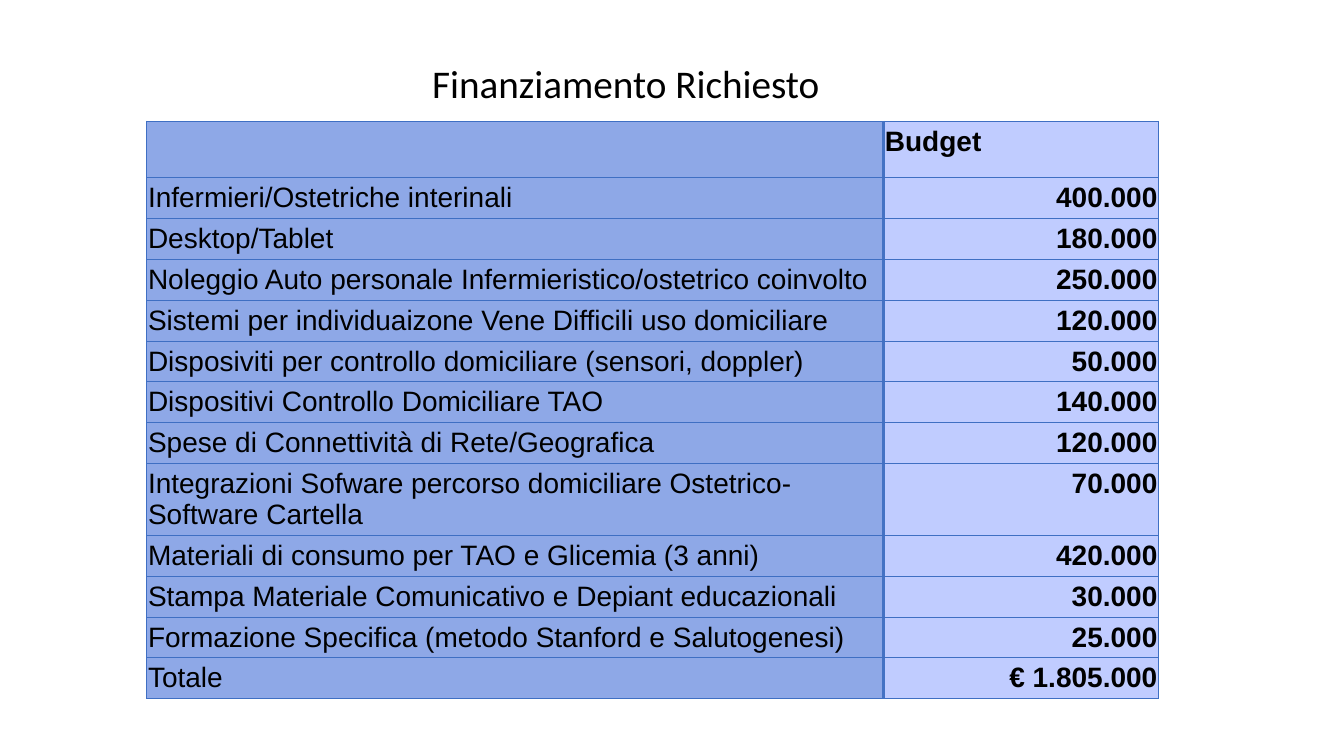
"""Build the slide with the requested funding table."""
import pptx
import pptx.dml.color
import pptx.enum.text
import pptx.oxml
import pptx.oxml.ns
import pptx.util

Cm, Pt = pptx.util.Cm, pptx.util.Pt
RGB = pptx.dml.color.RGBColor.from_string
ALIGN = pptx.enum.text.PP_ALIGN
ANCHOR = pptx.enum.text.MSO_ANCHOR

THEME = {
    "text": "000000", "label_fill": "8EA8E7", "value_fill": "C0CCFF",
    "border": "3F6FC3", "divider": "4472C4",
    "title_font": "Calibri", "table_font": "Arial",
    "title_size": 28, "table_size": 20,
}
BUDGET = [
    ("", "Budget"),
    ("Infermieri/Ostetriche interinali", "400.000"),
    ("Desktop/Tablet", "180.000"),
    ("Noleggio Auto personale Infermieristico/ostetrico coinvolto", "250.000"),
    ("Sistemi per individuaizone Vene Difficili uso domiciliare", "120.000"),
    ("Disposiviti per controllo domiciliare (sensori, doppler)", "50.000"),
    ("Dispositivi Controllo Domiciliare TAO", "140.000"),
    ("Spese di Connettività di Rete/Geografica", "120.000"),
    ("Integrazioni Sofware percorso domiciliare Ostetrico- Software Cartella", "70.000"),
    ("Materiali di consumo per TAO e Glicemia (3 anni)", "420.000"),
    ("Stampa Materiale Comunicativo e Depiant educazionali", "30.000"),
    ("Formazione Specifica (metodo Stanford e Salutogenesi)", "25.000"),
    ("Totale", "€ 1.805.000"),
]


def write(tf, text, *, font, size, bold=False, align=ALIGN.LEFT):
    p = tf.paragraphs[0]
    p.alignment = align
    p.font.size = Pt(size)
    if text:
        r = p.add_run()
        r.text = text
        r.font.name, r.font.size, r.font.bold = font, Pt(size), bold
        r.font.color.rgb = RGB(THEME["text"])


def set_border(cell, side, color, width):
    cell._tc.get_or_add_tcPr().append(pptx.oxml.parse_xml(
        f'<a:{side} {pptx.oxml.ns.nsdecls("a")} w="{Pt(width)}"><a:solidFill>'
        f'<a:srgbClr val="{color}"/></a:solidFill></a:{side}>'))


prs = pptx.Presentation()
prs.slide_width, prs.slide_height = Cm(33.87), Cm(19.05)
s = prs.slides.add_slide(prs.slide_layouts[5])

title = s.shapes.title
title.left, title.top, title.width, title.height = Cm(5.23), Cm(1.37), Cm(21.08), Cm(1.45)
tf = title.text_frame
tf.word_wrap = True
tf.auto_size = pptx.enum.text.MSO_AUTO_SIZE.NONE
tf.vertical_anchor = ANCHOR.TOP
write(tf, "Finanziamento Richiesto", font=THEME["title_font"],
      size=THEME["title_size"], align=ALIGN.CENTER)

table = s.shapes.add_table(len(BUDGET), 2, Cm(3.7), Cm(3.06), Cm(25.5), Cm(14.69)).table
table.first_row = table.horz_banding = False
table.columns[0].width, table.columns[1].width = Cm(18.57), Cm(6.93)

for i, row in enumerate(BUDGET):
    table.rows[i].height = Cm(1.42 if i == 0 else 0.92)
    for j, text in enumerate(row):
        cell = table.cell(i, j)
        cell.margin_left = cell.margin_right = Cm(0.03)
        cell.margin_top = cell.margin_bottom = Cm(0.127)
        cell.margin_top = cell.margin_bottom = Cm(0.12)
        cell.vertical_anchor = ANCHOR.TOP
        for side in ("lnL", "lnR", "lnT", "lnB"):
            inner = side == ("lnR", "lnL")[j]
            set_border(cell, side, THEME["divider" if inner else "border"], 2 if inner else 0.75)
        cell.fill.solid()
        cell.fill.fore_color.rgb = RGB(THEME["value_fill" if j else "label_fill"])
        write(cell.text_frame, text, font=THEME["table_font"], size=THEME["table_size"],
              bold=j == 1, align=ALIGN.RIGHT if i and j else ALIGN.LEFT)

prs.save("out.pptx")
